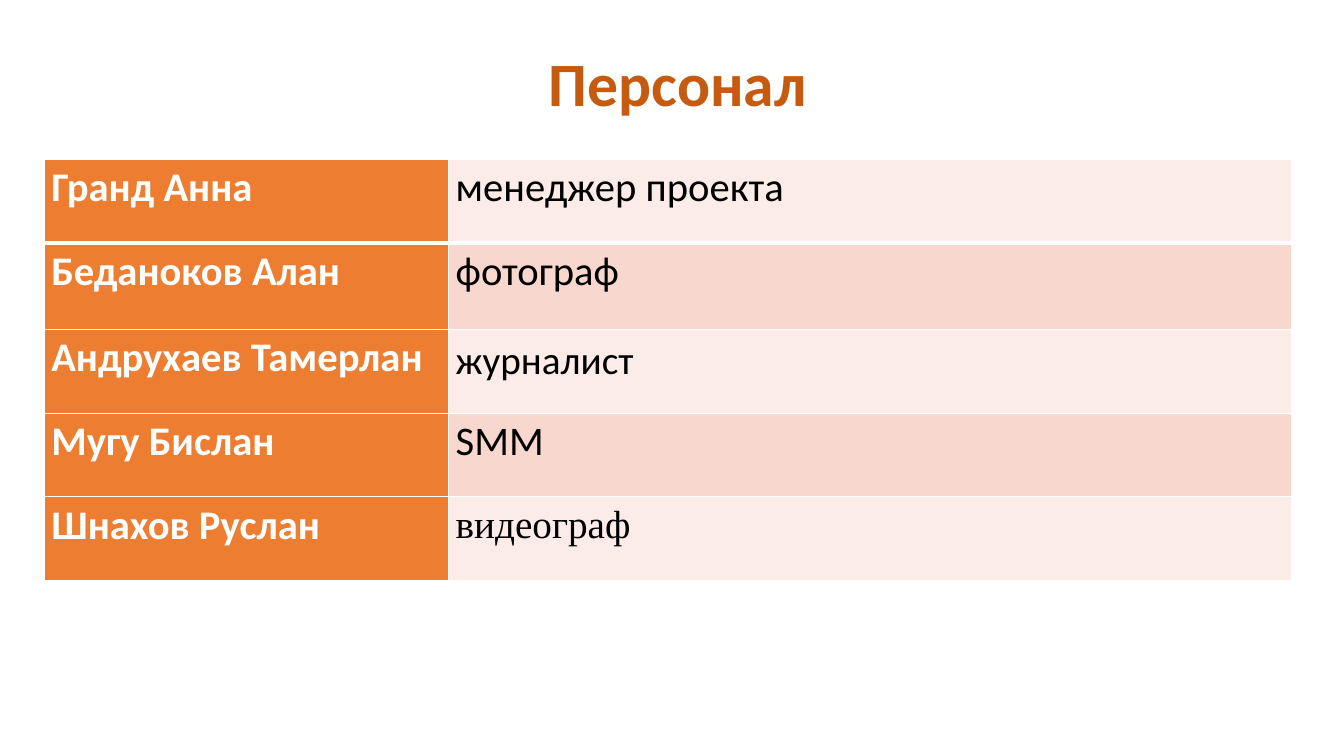
from lxml.etree import SubElement
from pptx import Presentation
from pptx.dml.color import RGBColor
from pptx.enum.text import MSO_ANCHOR, MSO_AUTO_SIZE, PP_ALIGN as Align
from pptx.oxml.ns import qn
from pptx.util import Inches, Pt

TITLE = "Персонал"
BODY_FONT = "Calibri"
JUSTIFIED = (Align.JUSTIFY, 1.07, 29, BODY_FONT)
STAFF = [
    ("Гранд Анна", "менеджер проекта", JUSTIFIED),
    ("Беданоков Алан", "фотограф", JUSTIFIED),
    ("Андрухаев Тамерлан", "журналист", (Align.LEFT, 1.15, 28, BODY_FONT)),
    ("Мугу Бислан", "SMM", JUSTIFIED),
    ("Шнахов Руслан", "видеограф", (Align.LEFT, 1.15, 28, "Times New Roman")),
]
NAME_STYLE = (Align.LEFT, 1.07, 29, BODY_FONT)
COLUMN_WIDTHS = (4.01, 8.36)
ROW_HEIGHTS = (0.83, 0.86, 0.83, 0.83, 0.83)

WHITE = RGBColor(0xFF, 0xFF, 0xFF)
BLACK = RGBColor(0x00, 0x00, 0x00)
RUST = RGBColor(0xC5, 0x5A, 0x11)
ORANGE = RGBColor(0xED, 0x7D, 0x31)
BANDS = (RGBColor(0xFC, 0xEC, 0xE8), RGBColor(0xF8, 0xD7, 0xCE))


def write(paragraph, text, style, color, bold):
    paragraph.text = text
    paragraph.alignment, paragraph.line_spacing, size, name = style
    font = paragraph.font
    font.size, font.name, font.bold = Pt(size), name, bold
    font.color.rgb = color


def add_borders(cell, top, bottom):
    properties = cell._tc.get_or_add_tcPr()
    for side, width in (("L", 1), ("R", 1), ("T", top), ("B", bottom)):
        line = SubElement(properties, qn(f"a:ln{side}"), w=str(Pt(width)))
        SubElement(SubElement(line, qn("a:solidFill")), qn("a:srgbClr"), val=str(WHITE))


def fill_cell(cell, text, style, color, bold, background, row):
    cell.margin_left = cell.margin_right = Inches(0.07)
    cell.margin_top = cell.margin_bottom = 0
    cell.vertical_anchor = MSO_ANCHOR.TOP
    add_borders(cell, 3 if row == 1 else 1, 3 if row == 0 else 1)
    cell.fill.solid()
    cell.fill.fore_color.rgb = background
    write(cell.text_frame.paragraphs[0], text, style, color, bold)


presentation = Presentation()
presentation.slide_width, presentation.slide_height = Inches(13.33), Inches(7.5)
slide = presentation.slides.add_slide(presentation.slide_layouts[6])

title = slide.shapes.add_textbox(Inches(5.33), Inches(0.4), Inches(2.79), Inches(0.84))
title.text_frame.word_wrap = False
title.text_frame.auto_size = MSO_AUTO_SIZE.SHAPE_TO_FIT_TEXT
write(title.text_frame.paragraphs[0], TITLE, (Align.CENTER, 1.0, 44, BODY_FONT), RUST, True)

table = slide.shapes.add_table(
    len(STAFF), len(COLUMN_WIDTHS), Inches(0.44), Inches(1.58),
    Inches(sum(COLUMN_WIDTHS)), Inches(sum(ROW_HEIGHTS)),
).table
for column, width in zip(table.columns, COLUMN_WIDTHS):
    column.width = Inches(width)
for row, height in zip(table.rows, ROW_HEIGHTS):
    row.height = Inches(height)
for index, (person, role, role_style) in enumerate(STAFF):
    fill_cell(table.cell(index, 0), person, NAME_STYLE, WHITE, True, ORANGE, index)
    fill_cell(table.cell(index, 1), role, role_style, BLACK, False, BANDS[index % 2], index)

presentation.save("out.pptx")
